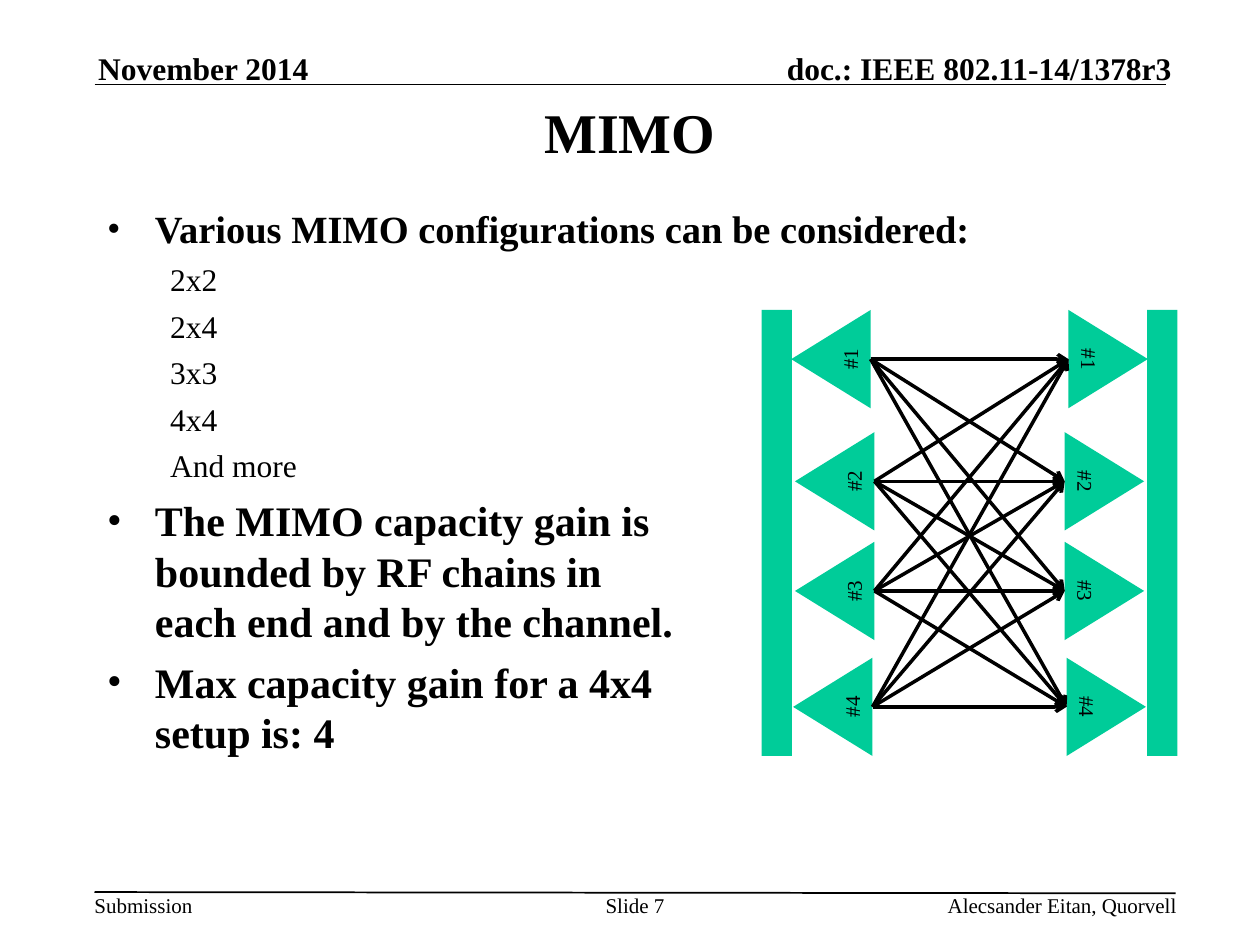
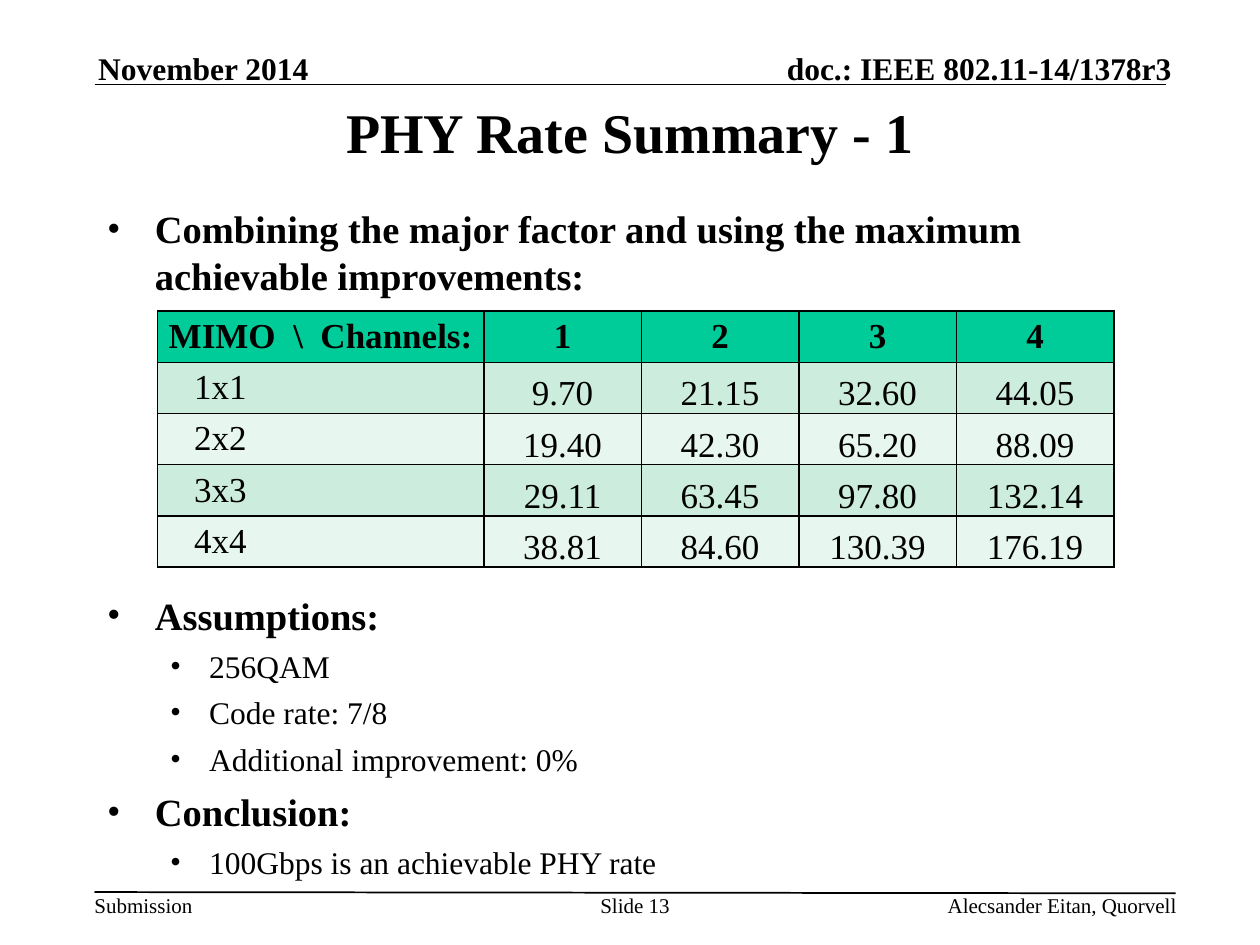
from copy import deepcopy
from itertools import product

from lxml import etree
from pptx import Presentation
from pptx.dml.color import RGBColor
from pptx.enum.shapes import MSO_CONNECTOR, MSO_SHAPE
from pptx.enum.text import MSO_ANCHOR, MSO_AUTO_SIZE, PP_ALIGN
from pptx.oxml.ns import qn
from pptx.util import Inches, Pt

# Enum members
LEFT, MID, RIGHT = PP_ALIGN.LEFT, PP_ALIGN.CENTER, PP_ALIGN.RIGHT
TOP, CENTER, BASE = MSO_ANCHOR.TOP, MSO_ANCHOR.MIDDLE, MSO_ANCHOR.BOTTOM
RECT, CONE = MSO_SHAPE.RECTANGLE, MSO_SHAPE.ISOSCELES_TRIANGLE
STRAIGHT = MSO_CONNECTOR.STRAIGHT
FIXED = MSO_AUTO_SIZE.NONE

# Colours and font
BLACK = RGBColor(0x00, 0x00, 0x00)
GREEN = RGBColor(0x00, 0xCC, 0x99)
MINT = RGBColor(0xCC, 0xEC, 0xDE)
PALE = RGBColor(0xE7, 0xF6, 0xEF)
FONT = "Times New Roman"

# Grid of 100 columns by 75 rows
COLS, ROWS = 100, 75
WIDTH, HEIGHT = Inches(10), Inches(7.5)

# List levels: indent and hang in inches, space before in points
LEVELS = [(0.38, 0.38, 6), (0.81, 0.31, 5)]


def node(parent, tag, **attrs):
    """Add a drawing element under its parent."""
    item = etree.SubElement(parent, qn(tag))
    for name, value in attrs.items():
        item.set(name, str(value))
    return item


def paint(parent, color):
    fill = node(parent, "a:solidFill")
    node(fill, "a:srgbClr", val=color)


def write(para, text, size=12, bold=False, align=LEFT):
    """Fill a paragraph; a newline in the text is a line break."""
    para.text = text
    para.alignment = align
    for run in para.runs:
        font = run.font
        font.name, font.size, font.bold = FONT, Pt(size), bold
        font.color.rgb = BLACK
    for gap in para._p.findall(qn("a:br")):
        gap.insert(0, deepcopy(para.runs[0]._r.rPr))


def inset(item, left=0, top=0, right=0, bottom=0):
    item.margin_left, item.margin_right = Inches(left), Inches(right)
    item.margin_top, item.margin_bottom = Inches(top), Inches(bottom)


class Deck:
    def __init__(self):
        self.prs = Presentation()
        self.prs.slide_width, self.prs.slide_height = WIDTH, HEIGHT
        self.slide = None

    def x(self, col):
        return round(WIDTH * col / COLS)

    def y(self, row):
        return round(HEIGHT * row / ROWS)

    def box(self, left, top, wide, high):
        return self.x(left), self.y(top), self.x(wide), self.y(high)

    def place(self, item, *area):
        item.left, item.top, item.width, item.height = self.box(*area)

    def start(self, title, number):
        """Open a slide with its title, header and footer."""
        self.slide = self.prs.slides.add_slide(self.prs.slide_layouts[1])
        head = self.slide.shapes.title
        self.place(head, 7.5, 7.5, 85, 5.8)
        frame = head.text_frame
        frame.auto_size, frame.vertical_anchor = FIXED, CENTER
        inset(frame, 0.1, 0.05, 0.1, 0.05)
        write(frame.paragraphs[0], title, size=32, bold=True, align=MID)

        self.line(7.5, 6.7, 92.5, 6.7)
        self.line(7.5, 70.8, 93.3, 70.9)
        self.label("November 2014", 7.8, 3.9, 26, 3, size=18, bold=True, anchor=BASE)
        self.label("doc.: IEEE 802.11-14/1378r3", 54.7, 3.9, 38.3, 3,
                   size=18, bold=True, align=RIGHT, anchor=BASE)
        self.label("Submission", 7.5, 70.8, 12, 2)
        self.label(f"Slide {number}", 47.5, 70.8, 5.8, 2, align=MID)
        self.label("Alecsander Eitan, Quorvell", 65.6, 70.8, 27.8, 2, align=RIGHT)

    def label(self, text, *area, anchor=TOP, **style):
        frame = self.slide.shapes.add_textbox(*self.box(*area)).text_frame
        frame.word_wrap, frame.vertical_anchor = True, anchor
        inset(frame)
        write(frame.paragraphs[0], text, **style)

    def line(self, x1, y1, x2, y2, width=1, arrow=False):
        link = self.slide.shapes.add_connector(
            STRAIGHT, self.x(x1), self.y(y1), self.x(x2), self.y(y2))
        link.line.color.rgb, link.line.width = BLACK, Pt(width)
        if arrow:
            node(link.line._get_or_add_ln(), "a:tailEnd", type="arrow")
        node(link._element.spPr, "a:effectLst")

    def shape(self, kind, *area, turn=0, text=""):
        item = self.slide.shapes.add_shape(kind, *self.box(*area))
        item.shadow.inherit = False
        item.fill.solid()
        item.fill.fore_color.rgb = GREEN
        item.line.fill.background()
        item.rotation = turn
        if text:
            frame = item.text_frame
            frame.vertical_anchor = TOP
            inset(frame, top=0.05)
            write(frame.paragraphs[0], text, align=MID)

    def list(self, items):
        """Each item is level, text, size, then optional bullet and space."""
        body = self.slide.placeholders[1]
        self.place(body, 7.5, 15.8, 85, 52.9)
        frame = body.text_frame
        frame.auto_size, frame.vertical_anchor = FIXED, TOP
        inset(frame, 0.1, 0.05, 0.1, 0.05)
        for i, (level, text, size, *rest) in enumerate(items):
            para = frame.add_paragraph() if i else frame.paragraphs[0]
            mark, space = (rest + ["•", None][len(rest):])
            indent, hang, before = LEVELS[level]
            write(para, text, size=size, bold=level == 0)
            para.level = level
            para.space_before = Pt(space or before)
            props = para._p.get_or_add_pPr()
            props.set("marL", str(Inches(indent)))
            props.set("indent", str(-Inches(hang)))
            if mark:
                node(node(props, "a:buClr"), "a:srgbClr", val=BLACK)
                node(props, "a:buFont", typeface=FONT)
                node(props, "a:buChar", char=mark)
            else:
                node(props, "a:buNone")

    def table(self, data, left, top, widths, high):
        area = self.box(left, top, sum(widths), high * len(data))
        grid = self.slide.shapes.add_table(len(data), len(widths), *area).table
        for col, wide in zip(grid.columns, widths):
            col.width = self.x(wide)
        for r, row in enumerate(data):
            grid.rows[r].height = self.y(high)
            color = GREEN if r == 0 else MINT if r % 2 else PALE
            for c, text in enumerate(row):
                self.cell(grid.cell(r, c), text, color, head=r == 0, side=c == 0)

    def cell(self, cell, text, color, head, side):
        name = side and not head
        write(cell.text_frame.paragraphs[0], text, size=20, bold=head,
              align=LEFT if name else MID)
        cell.vertical_anchor = CENTER if head or side else BASE
        inset(cell, left=0.29 if name else 0)
        props = cell._tc.get_or_add_tcPr()
        for edge in ("a:lnL", "a:lnR", "a:lnT", "a:lnB"):
            paint(node(props, edge, w=Pt(1)), BLACK)
        cell.fill.solid()
        cell.fill.fore_color.rgb = color


def mimo(deck):
    deck.start("MIMO", 7)
    sizes = ["2x2", "2x4", "3x3", "4x4", "And more"]
    deck.list([
        (0, "Various MIMO configurations can be considered:", 22),
        *[(1, text, 18, "") for text in sizes],
        (0, "The MIMO capacity gain is \nbounded by RF chains in \n"
            "each end and by the channel.", 24),
        (0, "Max capacity gain for a 4x4 \nsetup is: 4", 24),
    ])

    # Antennas mirrored about the axis: row and half gap of each pair
    axis, base, tall = 76.95, 7.8, 6.3
    pairs = [(28.5, 7.85), (38.2, 7.55), (46.9, 7.55), (56.1, 7.7)]
    for side, turn in ((-1, 270), (1, 90)):
        deck.shape(RECT, axis + side * 15.3 - 1.2, 24.6, 2.4, 35.4)
        for i, (row, gap) in enumerate(pairs, 1):
            mid = axis + side * (gap + tall / 2)
            deck.shape(CONE, mid - base / 2, row - tall / 2, base, tall,
                       turn=turn, text=f"#{i}")

    # Every sender reaches every receiver
    for (y1, gap1), (y2, gap2) in product(pairs, pairs):
        deck.line(axis - gap1, y1, axis + gap2, y2, width=2, arrow=True)


def rates(deck):
    deck.start("PHY Rate Summary - 1", 13)
    deck.list([
        (0, "Combining the major factor and using the maximum "
            "achievable improvements:", 22),
        (0, "Assumptions:", 22, "•", 168),
        (1, "256QAM", 18),
        (1, "Code rate: 7/8", 18),
        (1, "Additional improvement: 0%", 18),
        (0, "Conclusion:", 22),
        (1, "100Gbps is an achievable PHY rate", 18),
    ])
    deck.table([
        [r"MIMO  \  Channels:", "1", "2", "3", "4"],
        ["1x1", "9.70", "21.15", "32.60", "44.05"],
        ["2x2", "19.40", "42.30", "65.20", "88.09"],
        ["3x3", "29.11", "63.45", "97.80", "132.14"],
        ["4x4", "38.81", "84.60", "130.39", "176.19"],
    ], 12.5, 24.7, [25.9] + [12.5] * 4, 4.06)


def main():
    deck = Deck()
    mimo(deck)
    rates(deck)
    deck.prs.save("out.pptx")


if __name__ == "__main__":
    main()
